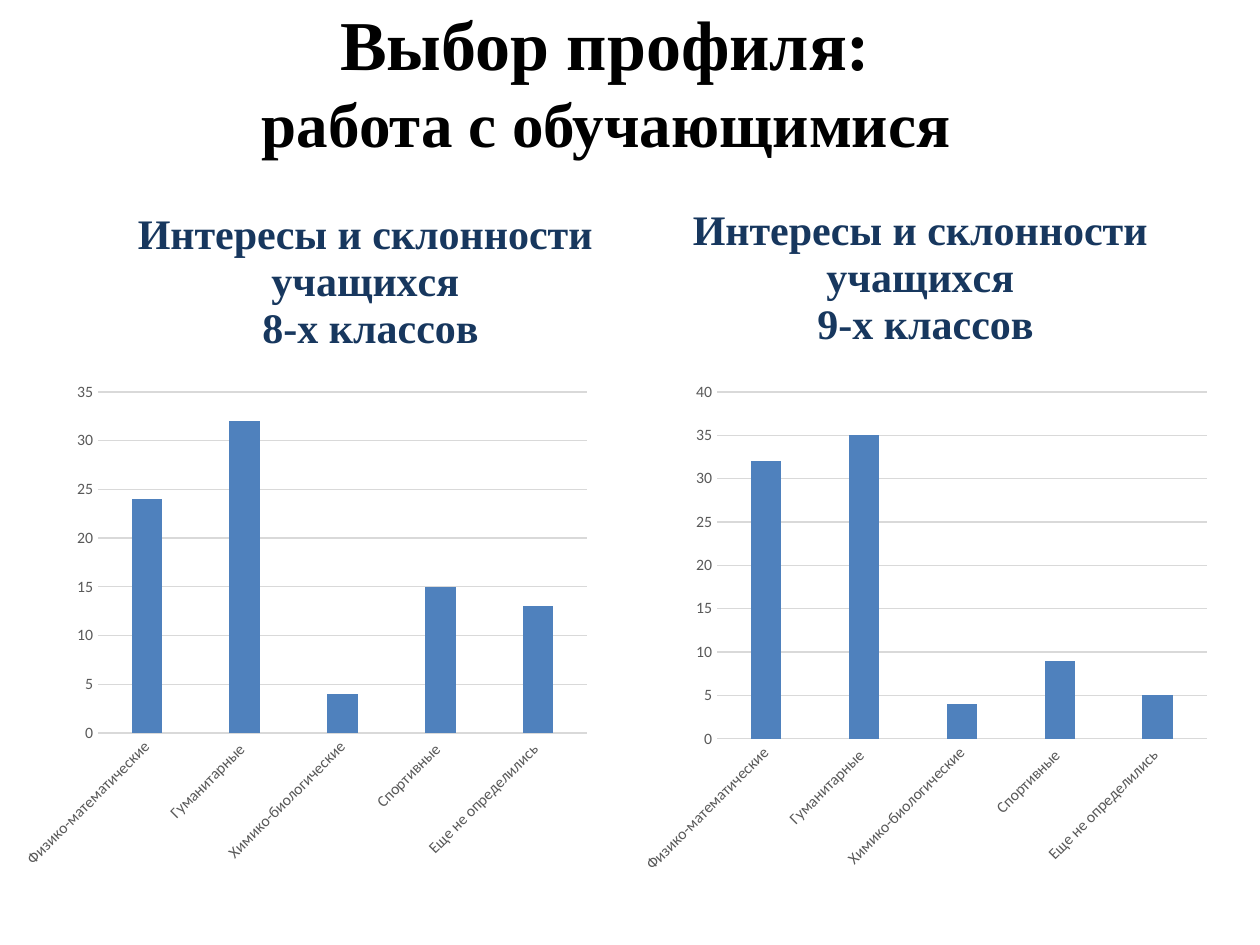
import pptx
import pptx.chart.data
import pptx.dml.color
import pptx.enum.chart
import pptx.enum.text
import pptx.oxml
import pptx.oxml.ns
import pptx.util

PX_PER_INCH = 126
SLIDE_SIZE = (1260, 945)

HEADING_BOX = (11, 0, 1206, 161)
HEADING = [("Выбор профиля: ", "heading"), ("работа с обучающимися ", "subheading")]

CATEGORIES = ["Физико-математические", "Гуманитарные ", "Химико-биологические",
              "Спортивные ", "Еще не определились "]
# Boxes are left, top, width, height in px on the slide
CHARTS = [
    {"grade": "9-х", "values": [32, 35, 4, 9, 5], "maximum": 40,
     "box": (631, 195, 588, 693), "plot": (717, 392, 490, 347), "title_at": (689, 201)},
    {"grade": "8-х", "values": [24, 32, 4, 15, 13], "maximum": 35,
     "box": (11, 195, 587, 687), "plot": (98, 392, 489, 341), "title_at": (134, 205)},
]

THEME = {
    "heading": {"name": "Times New Roman", "size": 40, "bold": True, "color": "000000"},
    "subheading": {"name": "Times New Roman", "size": 36, "bold": True, "color": "000000"},
    "chart_title": {"name": "Times New Roman", "size": 24, "bold": True, "color": "17375E"},
    "chart": {"name": "Calibri", "size": 10, "color": "000000"},
    "axis": {"name": "Calibri", "size": 9, "bold": False, "color": "595959"},
    "bar": "4F81BD",
    "line": "D9D9D9",
}


def px(value):
    return pptx.util.Emu(round(value * pptx.util.Inches(1) / PX_PER_INCH))


def rgb(value):
    return pptx.dml.color.RGBColor.from_string(value)


def style_font(font, style):
    for name, value in THEME[style].items():
        if name == "color":
            font.color.rgb = rgb(value)
        else:
            setattr(font, name, pptx.util.Pt(value) if name == "size" else value)


def style_line(line):
    line.color.rgb = rgb(THEME["line"])
    line.width = pptx.util.Pt(0.75)


def set_layout(element, index, box, area, inner=False):
    """Place a chart part at area, as fractions of the chart's box."""
    for old in element.findall(pptx.oxml.ns.qn("c:layout")):
        element.remove(old)
    left, top, width, height = box
    fractions = [(area[0] - left) / width, (area[1] - top) / height]
    fractions += [area[2] / width, area[3] / height] if inner else []
    parts = '<c:layoutTarget val="inner"/>' if inner else ""
    parts += '<c:xMode val="edge"/><c:yMode val="edge"/>'
    parts += "".join(f'<c:{name} val="{value:.4f}"/>' for name, value in zip("xywh", fractions))
    element.insert(index, pptx.oxml.parse_xml(
        f'<c:layout {pptx.oxml.ns.nsdecls("c")}><c:manualLayout>{parts}</c:manualLayout></c:layout>'))


def add_heading(slide):
    frame = slide.shapes.add_textbox(*map(px, HEADING_BOX)).text_frame
    settings = {"word_wrap": True, "margin_left": 0, "margin_right": 0, "margin_top": 0,
                "margin_bottom": 0, "vertical_anchor": pptx.enum.text.MSO_ANCHOR.MIDDLE}
    for name, value in settings.items():
        setattr(frame, name, value)
    paragraph = frame.paragraphs[0]
    paragraph.alignment = pptx.enum.text.PP_ALIGN.CENTER
    for number, (text, style) in enumerate(HEADING):
        if number:
            paragraph.add_line_break()
        run = paragraph.add_run()
        run.text = text
        style_font(run.font, style)


def add_title(chart, item):
    title = chart.chart_title
    title.text_frame.text = f"Интересы и склонности учащихся\n {item['grade']} классов"
    for paragraph in title.text_frame.paragraphs:
        paragraph.alignment = pptx.enum.text.PP_ALIGN.CENTER
        for run in paragraph.runs:
            style_font(run.font, "chart_title")
    set_layout(title._element, 1, item["box"], item["title_at"])


def style_axes(chart, maximum):
    category_axis, value_axis = chart.category_axis, chart.value_axis
    for axis in (category_axis, value_axis):
        axis.major_tick_mark = pptx.enum.chart.XL_TICK_MARK.NONE
        axis.minor_tick_mark = pptx.enum.chart.XL_TICK_MARK.NONE
        style_font(axis.tick_labels.font, "axis")
    style_line(category_axis.format.line)
    label_body = category_axis._element.find(
        f'{pptx.oxml.ns.qn("c:txPr")}/{pptx.oxml.ns.qn("a:bodyPr")}')
    label_body.set("rot", "-2700000")
    value_axis.format.line.fill.background()
    style_line(value_axis.major_gridlines.format.line)
    for name, value in {"minimum_scale": 0, "maximum_scale": maximum, "major_unit": 5}.items():
        setattr(value_axis, name, value)


def add_column_chart(slide, item):
    data = pptx.chart.data.CategoryChartData()
    data.categories = CATEGORIES
    data.add_series("Series 1", item["values"])
    chart = slide.shapes.add_chart(pptx.enum.chart.XL_CHART_TYPE.COLUMN_CLUSTERED,
                                   *map(px, item["box"]), data).chart
    style_font(chart.font, "chart")
    chart.has_legend = False
    add_title(chart, item)
    style_axes(chart, item["maximum"])
    plot = chart.plots[0]
    for name, value in {"gap_width": 219, "overlap": -27, "vary_by_categories": False}.items():
        setattr(plot, name, value)
    fill = plot.series[0].format.fill
    fill.solid()
    fill.fore_color.rgb = rgb(THEME["bar"])
    plot_area = chart._chartSpace.find(f'.//{pptx.oxml.ns.qn("c:plotArea")}')
    set_layout(plot_area, 0, item["box"], item["plot"], inner=True)


def main():
    presentation = pptx.Presentation()
    presentation.slide_width, presentation.slide_height = map(px, SLIDE_SIZE)
    slide = presentation.slides.add_slide(presentation.slide_layouts[6])
    for item in CHARTS:
        add_column_chart(slide, item)
    add_heading(slide)
    presentation.save("out.pptx")


if __name__ == "__main__":
    main()
